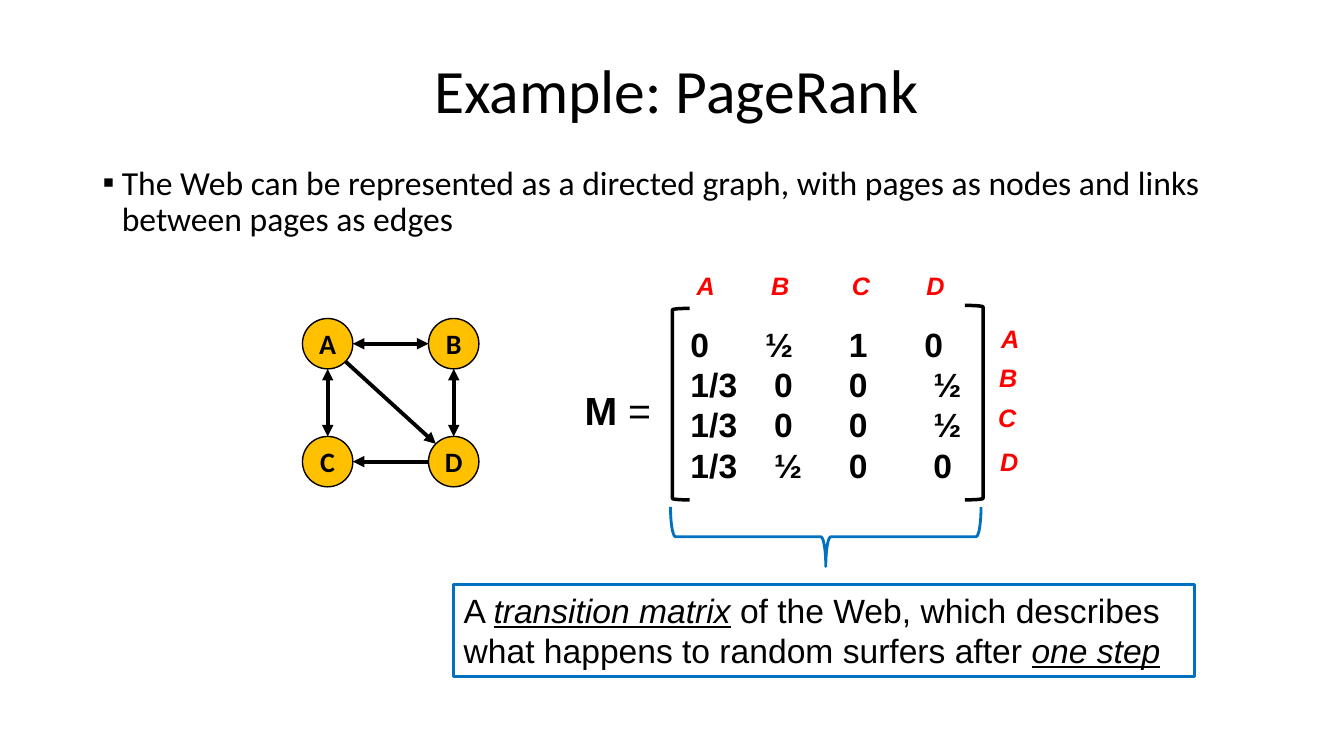
from math import copysign, sqrt

from lxml import etree
from pptx import Presentation
from pptx.dml.color import RGBColor
from pptx.enum.shapes import MSO_CONNECTOR, MSO_SHAPE
from pptx.enum.text import MSO_ANCHOR, PP_ALIGN
from pptx.oxml.ns import qn
from pptx.util import Inches, Pt

BLACK = RGBColor(0x00, 0x00, 0x00)
RED = RGBColor(0xFF, 0x00, 0x00)
BLUE = RGBColor(0x00, 0x70, 0xC0)
AMBER = RGBColor(0xFF, 0xC0, 0x00)

TITLE = {"size": Pt(44), "name": "Calibri"}
BODY = {"size": Pt(24), "name": "Calibri"}
NODE = {"size": Pt(20), "name": "Calibri", "bold": True}
ENTRY = {"size": Pt(24), "name": "Arial", "bold": True}
LABEL = {"size": Pt(18), "name": "Arial", "bold": True, "italic": True}
EQUATION = {"size": Pt(28), "name": "Arial"}
CAPTION = {"size": Pt(24), "name": "Arial"}
TERM = {"italic": True, "underline": True}


def add_run(paragraph, text, formats, color=BLACK):
    run = paragraph.add_run()
    run.text = text
    for name, value in formats.items():
        setattr(run.font, name, value)
    run.font.color.rgb = color


def add_text_box(slide, left, top, width, height, wrap=True):
    box = slide.shapes.add_textbox(Inches(left), Inches(top), Inches(width), Inches(height))
    box.text_frame.word_wrap = wrap
    return box.text_frame


def add_outlined(slide, kind, box, color, weight, fill=None):
    shape = slide.shapes.add_shape(kind, *map(Inches, box))
    shape.shadow.inherit = False
    shape.line.color.rgb = color
    shape.line.width = Pt(weight)
    if fill is None:
        shape.fill.background()
    else:
        shape.fill.solid()
        shape.fill.fore_color.rgb = fill
    return shape


def add_arrow(slide, start, end, both_ends):
    points = map(Inches, (*start, *end))
    arrow = slide.shapes.add_connector(MSO_CONNECTOR.STRAIGHT, *points)
    arrow.line.color.rgb = BLACK
    arrow.line.width = Pt(2.75)
    line = arrow.line._get_or_add_ln()
    for tag in ("a:headEnd", "a:tailEnd") if both_ends else ("a:tailEnd",):
        etree.SubElement(line, qn(tag), type="triangle")
    etree.SubElement(arrow._element.spPr, qn("a:effectLst"))


def set_tabs(paragraph, stops):
    tabs = etree.SubElement(paragraph._p.get_or_add_pPr(), qn("a:tabLst"))
    for stop in stops:
        etree.SubElement(tabs, qn("a:tab"), pos=str(Inches(stop)), algn="l")


def build_title(slide, left, top, width, height):
    frame = add_text_box(slide, left, top, width, height)
    frame.vertical_anchor = MSO_ANCHOR.MIDDLE
    paragraph = frame.paragraphs[0]
    paragraph.alignment = PP_ALIGN.CENTER
    paragraph.line_spacing = 0.9
    add_run(paragraph, "Example: PageRank", TITLE)


def build_body(slide, left, top, width, height):
    paragraph = add_text_box(slide, left, top, width, height).paragraphs[0]
    paragraph.line_spacing = 0.9
    properties = paragraph._p.get_or_add_pPr()
    properties.set("marL", str(Inches(0.19)))
    properties.set("indent", str(Inches(-0.19)))
    etree.SubElement(properties, qn("a:buFont"), typeface="Arial")
    etree.SubElement(properties, qn("a:buChar"), char="▪")
    add_run(paragraph, "The Web can be represented as a directed graph, "
            "with pages as nodes and links between pages as edges", BODY)


def build_graph(slide, left, top, width, height):
    size = 0.5
    radius = size / 2
    centers = {}
    for index, name in enumerate("ABCD"):
        row, column = divmod(index, 2)
        x = left + column * (width - size)
        y = top + row * (height - size)
        centers[name] = (x + radius, y + radius)
        node = add_outlined(slide, MSO_SHAPE.OVAL, (x, y, size, size), BLACK, 1, AMBER)
        frame = node.text_frame
        frame.word_wrap = False
        frame.vertical_anchor = MSO_ANCHOR.MIDDLE
        for side in ("left", "right", "top", "bottom"):
            setattr(frame, f"margin_{side}", 0)
        frame.paragraphs[0].alignment = PP_ALIGN.CENTER
        add_run(frame.paragraphs[0], name, NODE)

    # Links run from rim to rim; diagonal ones leave at 45 degrees
    for source, target, both_ends in (("A", "D", False), ("B", "A", True), ("B", "D", True),
                                      ("A", "C", True), ("D", "C", False)):
        start, end = centers[source], centers[target]
        steps = [copysign(1, b - a) if abs(b - a) > 0.01 else 0 for a, b in zip(start, end)]
        reach = radius / sqrt(sum(step * step for step in steps))
        add_arrow(slide,
                  [a + step * reach for a, step in zip(start, steps)],
                  [b - step * reach for b, step in zip(end, steps)], both_ends)


def build_matrix(slide, left, top, width, height):
    # Brackets
    add_outlined(slide, MSO_SHAPE.LEFT_BRACKET, (left, top + 0.03, 0.17, height - 0.03),
                 BLACK, 2.5)
    add_outlined(slide, MSO_SHAPE.RIGHT_BRACKET, (left + width - 0.18, top, 0.18, height),
                 BLACK, 2.5)

    # Entries
    frame = add_text_box(slide, left + 0.08, top + 0.13, 2.91, 1.72)
    first_stops, other_stops = (0.74, 1.57, 2.32), (0.83, 1.57, 2.41)
    rows = ("0 ½ 1 0", "1/3 0 0 ½", "1/3 0 0 ½", "1/3 ½ 0 0")
    for index, row in enumerate(rows):
        paragraph = frame.add_paragraph() if index else frame.paragraphs[0]
        set_tabs(paragraph, other_stops if index else first_stops)
        add_run(paragraph, "\t".join(row.split()), ENTRY)

    # Column and row labels
    header = add_text_box(slide, left + 0.14, top - 0.4, 2.81, 0.4).paragraphs[0]
    set_tabs(header, (0.74, 1.54, 2.28))
    add_run(header, "\t".join("ABCD"), LABEL, RED)
    offsets = ((0.08, 0.13), (0.06, 0.52), (0.05, 0.91), (0.07, 1.35))
    for name, (across, down) in zip("ABCD", offsets):
        label = add_text_box(slide, left + width + across, top + down, 0.38, 0.4, wrap=False)
        add_run(label.paragraphs[0], name, LABEL, RED)

    # Left side of the equation
    equation = add_text_box(slide, left - 0.97, top + 0.75, 0.98, 0.57, wrap=False).paragraphs[0]
    add_run(equation, "M ", EQUATION | {"bold": True})
    add_run(equation, "=", EQUATION)


def build_brace(slide, left, top, width, height):
    # The preset opens sideways, so it is turned about its centre
    box = (left + (width - height) / 2, top + (height - width) / 2, height, width)
    add_outlined(slide, MSO_SHAPE.RIGHT_BRACE, box, BLUE, 2).rotation = 90


def build_caption(slide, left, top, width, height):
    shape = add_outlined(slide, MSO_SHAPE.RECTANGLE, (left, top, width, height), BLUE, 2)
    frame = shape.text_frame
    frame.word_wrap = True
    frame.vertical_anchor = MSO_ANCHOR.TOP
    paragraph = frame.paragraphs[0]
    paragraph.alignment = PP_ALIGN.LEFT
    add_run(paragraph, "A ", CAPTION)
    add_run(paragraph, "transition matrix", CAPTION | TERM)
    add_run(paragraph, " of the Web, which describes what happens to random surfers after ",
            CAPTION)
    add_run(paragraph, "one step", CAPTION | TERM)


def main():
    presentation = Presentation()
    presentation.slide_width = Inches(13.33)
    presentation.slide_height = Inches(7.5)
    slide = presentation.slides.add_slide(presentation.slide_layouts[6])
    build_title(slide, 1.92, 0.3, 9.58, 1.25)
    build_body(slide, 0.92, 1.6, 11.3, 1.08)
    build_graph(slide, 3, 3.16, 1.75, 1.67)
    build_matrix(slide, 6.67, 3.03, 3.08, 1.93)
    build_brace(slide, 6.65, 5.03, 3.08, 0.59)
    build_caption(slide, 4.5, 5.8, 7.35, 0.91)
    presentation.save("out.pptx")


if __name__ == "__main__":
    main()
